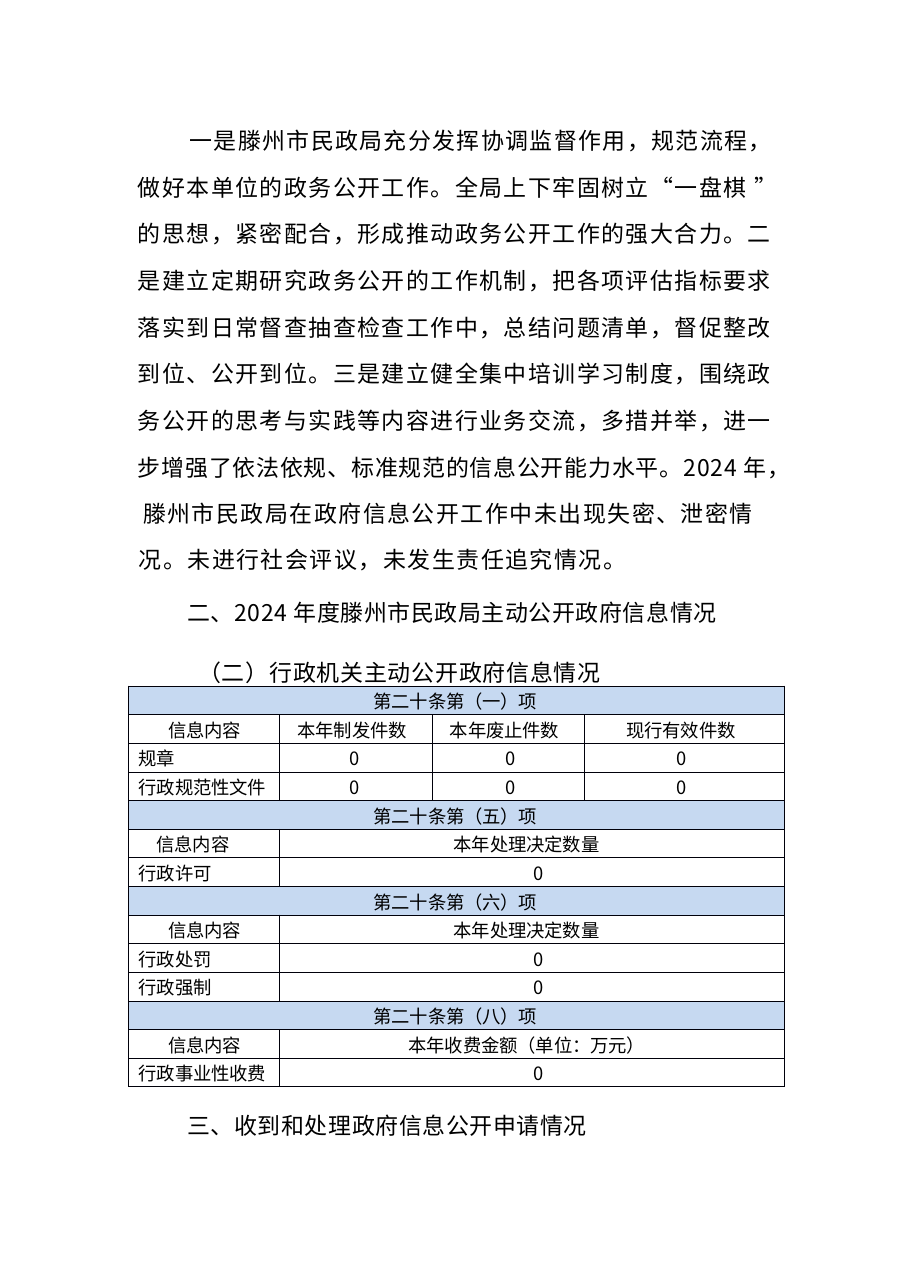
from lxml.etree import SubElement
from pptx import Presentation
from pptx.dml.color import RGBColor
from pptx.enum.text import MSO_ANCHOR
from pptx.oxml.ns import qn
from pptx.util import Cm, Pt

COLORS = {"text": "000000", "border": "00000A", "band": "C6D9F1"}
FONT = "Noto Sans CJK SC"
FRAME_FORMAT = {"word_wrap": True, "margin_left": 0, "margin_right": 0,
                "margin_top": 0, "margin_bottom": 0}
CELL_FORMAT = {"margin_left": 0, "margin_right": 0, "margin_top": Cm(0.1),
               "margin_bottom": 0, "vertical_anchor": MSO_ANCHOR.MIDDLE}

BODY = [
    (["一是滕州市民政局充分发挥协调监督作用，规范流程，"], 1.22, 18, 0.9),
    (["做好本单位的政务公开工作。全局上下牢固树立“一盘棋 ”",
      "的思想，紧密配合，形成推动政务公开工作的强大合力。二",
      "是建立定期研究政务公开的工作机制，把各项评估指标要求",
      "落实到日常督查抽查检查工作中，总结问题清单，督促整改",
      "到位、公开到位。三是建立健全集中培训学习制度，围绕政",
      "务公开的思考与实践等内容进行业务交流，多措并举，进一"], 0.03, 30.5, 0.95),
    (["步增强了依法依规、标准规范的信息公开能力水平。2024 年，"], 0.03, 30.5, 0.5),
    (["滕州市民政局在政府信息公开工作中未出现失密、泄密情"], 0.15, 30.5, 1),
    (["况。未进行社会评议，未发生责任追究情况。"], 0.05, 30, 1),
    (["二、2024 年度滕州市民政局主动公开政府信息情况"], 1.17, 34.5, 0.4),
    (["（二）行政机关主动公开政府信息情况"], 1.42, 39, 0.5),
]
CLOSING = [(["三、收到和处理政府信息公开申请情况"], 0.03, 19, 0.4)]

COLUMNS = [3.48, 3.51, 3.51, 4.6]
ROW_HEIGHT = 0.66
CONTENT = ("信息内容", 0.91)
DECISIONS = ("本年处理决定数量", 4.01)
ZEROS = [("0", 1.6), ("0", 1.7), ("0", 2.13)]
WIDE_ZERO = ("0", 5.84)


def band(number):
    """Return the full-width row that opens a section of the table."""
    return [(f"第二十条第（{number}）项", 5.64)]


def label(text):
    """Return a left-hand row label."""
    return text, 0.23


ROWS = [
    band("一"),
    [CONTENT, ("本年制发件数", 0.41), ("本年废止件数", 0.41), ("现行有效件数", 0.97)],
    [label("规章"), *ZEROS],
    [label("行政规范性文件"), *ZEROS],
    band("五"),
    [("信息内容", 0.64), DECISIONS],
    [label("行政许可"), WIDE_ZERO],
    band("六"),
    [CONTENT, DECISIONS],
    [label("行政处罚"), WIDE_ZERO],
    [label("行政强制"), WIDE_ZERO],
    band("八"),
    [CONTENT, ("本年收费金额（单位：万元）", 2.97)],
    [label("行政事业性收费"), WIDE_ZERO],
]


def apply(target, values):
    """Set each named attribute on the target."""
    for name, value in values.items():
        setattr(target, name, value)


def write_para(para, lines, indent, height, size, tracking):
    """Fill a paragraph with lines at a given indent and line height."""
    para.line_spacing = Pt(height)
    para._p.get_or_add_pPr().set("marL", str(Cm(indent)))
    for index, line in enumerate(lines):
        if index:
            para.add_line_break()
        span = para.add_run()
        span.text = line
        apply(span.font, {"name": FONT, "size": Pt(size)})
        span.font.color.rgb = RGBColor.from_string(COLORS["text"])
        props = span.font._element
        props.set("spc", str(round(tracking * 100)))
        SubElement(props, qn("a:ea"), typeface=FONT)


def add_text(page, box, paras):
    """Place a run of paragraphs in the given box."""
    frame = page.shapes.add_textbox(*map(Cm, box)).text_frame
    apply(frame, FRAME_FORMAT)
    for index, (lines, indent, height, tracking) in enumerate(paras):
        para = frame.add_paragraph() if index else frame.paragraphs[0]
        write_para(para, lines, indent, height, 15, tracking)


def add_borders(cell):
    """Draw thin lines on all four sides of a cell."""
    props = cell._tc.get_or_add_tcPr()
    for side in ("lnL", "lnR", "lnT", "lnB"):
        line = SubElement(props, qn(f"a:{side}"), w=str(Pt(0.5)))
        fill = SubElement(line, qn("a:solidFill"))
        SubElement(fill, qn("a:srgbClr"), val=COLORS["border"])


def add_disclosure_table(page, box):
    """Place the table of disclosed information in the given box."""
    table = page.shapes.add_table(len(ROWS), len(COLUMNS), *map(Cm, box)).table
    apply(table, {"first_row": False, "horz_banding": False})
    for column, width in zip(table.columns, COLUMNS):
        column.width = Cm(width)
    last = len(COLUMNS) - 1
    for row_index, entries in enumerate(ROWS):
        table.rows[row_index].height = Cm(ROW_HEIGHT)
        for column_index in range(len(COLUMNS)):
            cell = table.cell(row_index, column_index)
            apply(cell, CELL_FORMAT)
            add_borders(cell)
            if len(entries) == 1:
                cell.fill.solid()
                cell.fill.fore_color.rgb = RGBColor.from_string(COLORS["band"])
            else:
                cell.fill.background()
        if len(entries) <= last:
            start = table.cell(row_index, len(entries) - 1)
            start.merge(table.cell(row_index, last))
        for column_index, (text, indent) in enumerate(entries):
            para = table.cell(row_index, column_index).text_frame.paragraphs[0]
            write_para(para, [text], indent, 15, 12, -0.1)


def main():
    """Build the report page and save it."""
    deck = Presentation()
    apply(deck, {"slide_width": Cm(21), "slide_height": Cm(29.7)})
    page = deck.slides.add_slide(deck.slide_layouts[6])
    add_text(page, (3.15, 2.92, 15.5, 12.88), BODY)
    add_disclosure_table(page, (2.97, 15.82, sum(COLUMNS), ROW_HEIGHT * len(ROWS)))
    add_text(page, (4.29, 25.6, 10, 0.69), CLOSING)
    deck.save("out.pptx")


if __name__ == "__main__":
    main()
